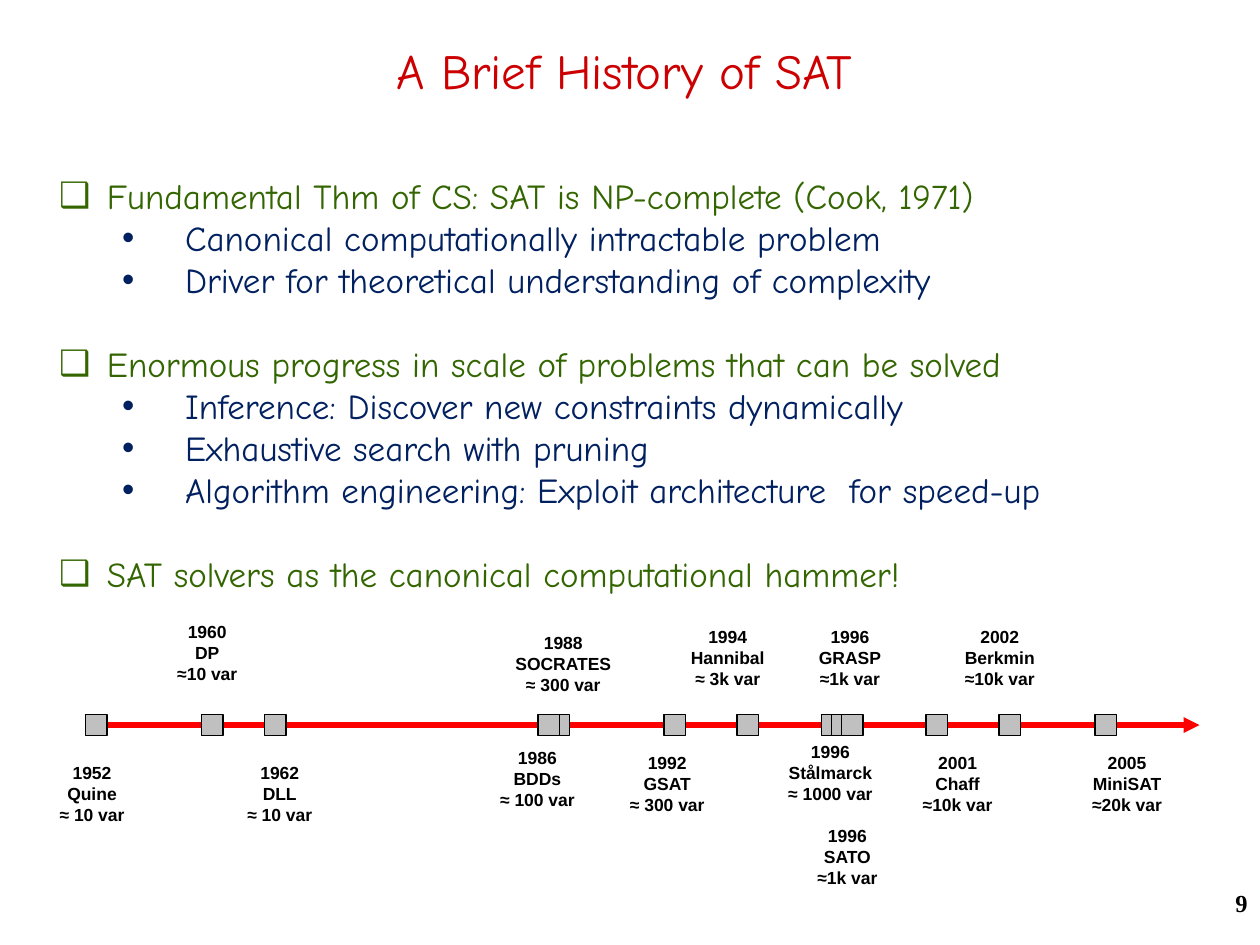
from lxml.etree import SubElement
from pptx import Presentation
from pptx.dml.color import RGBColor
from pptx.enum.shapes import MSO_CONNECTOR as Connector, MSO_SHAPE as Preset
from pptx.enum.text import MSO_ANCHOR as Anchor, PP_ALIGN as Align
from pptx.oxml.ns import qn
from pptx.util import Inches, Pt

COLORS = {
    "title": "CC0000",
    "topic": "336600",
    "detail": "002060",
    "text": "000000",
    "axis": "FF0000",
    "marker": "C0C0C0",
}
AXIS_Y = 5.75
MARKER_TOP, MARKER_SIZE = 5.67, 0.17
MARKERS = [0.68, 1.6, 2.1, 4.35, 5.85, 6.52, 4.27, 5.27, 6.6, 7.35, 7.93, 6.68, 8.69]

TOPICS = [
    ("Fundamental Thm of CS: SAT is NP-complete (Cook, 1971)", [
        "Canonical computationally intractable problem",
        "Driver for theoretical understanding of complexity",
    ]),
    ("Enormous progress in scale of problems that can be solved", [
        "Inference: Discover new constraints dynamically",
        "Exhaustive search with pruning",
        "Algorithm engineering: Exploit architecture  for speed-up",
    ]),
    ("SAT solvers as the canonical computational hammer!", []),
]

SOLVERS = [
    (0.32, 6.0, 0.82, "1952\nQuine\n≈ 10 var"),
    (1.26, 4.88, 0.77, "1960\nDP\n≈10 var"),
    (1.81, 6.0, 0.82, "1962\nDLL\n≈ 10 var"),
    (3.81, 5.88, 0.91, "1986\nBDDs\n≈ 100 var"),
    (3.68, 4.97, 1.58, "1988\nSOCRATES\n≈ 300 var"),
    (4.84, 5.92, 0.91, "1992\nGSAT\n≈ 300 var"),
    (5.32, 4.92, 0.91, "1994\nHannibal\n≈ 3k var"),
    (6.09, 5.83, 1.0, "1996\nStålmarck\n≈ 1000 var"),
    (6.35, 4.92, 0.79, "1996\nGRASP\n≈1k var"),
    (6.34, 6.5, 0.77, "1996\nSATO\n≈1k var"),
    (7.17, 5.92, 0.86, "2001\nChaff\n≈10k var"),
    (7.5, 4.92, 0.87, "2002\nBerkmin\n≈10k var"),
    (8.51, 5.92, 0.87, "2005\nMiniSAT\n≈20k var"),
]


def rgb(name):
    return RGBColor.from_string(COLORS[name])


class HistoryPage:
    heading_font = "Comic Neue"
    label_font = "Arial"
    number_font = "Times New Roman"

    def __init__(self, deck):
        self.page = deck.slides.add_slide(deck.slide_layouts[6])

    def style(self, para, font, size, color, bold=False):
        for span in para.runs:
            span.font.name = font
            span.font.size = Pt(size)
            span.font.bold = bold
            span.font.color.rgb = rgb(color)

    def text(self, area, content, font, size, color, align, bold=False,
             anchor=Anchor.TOP, wrap=True):
        box = self.page.shapes.add_textbox(*map(Inches, area))
        frame = box.text_frame
        frame.word_wrap = wrap
        frame.vertical_anchor = anchor
        frame.text = content
        for para in frame.paragraphs:
            para.alignment = align
            self.style(para, font, size, color, bold)
        return frame

    def title(self, content):
        self.text((0.77, -0.07, 8.5, 1.25), content, self.heading_font, 28,
                  "title", Align.CENTER, anchor=Anchor.MIDDLE)

    def label(self, left, top, width, content):
        self.text((left, top, width, 0.7), content, self.label_font, 10,
                  "text", Align.CENTER, bold=True, wrap=False)

    def number(self, content):
        self.text((7.92, 7, 2.08, 0.5), content, self.number_font, 14,
                  "text", Align.RIGHT, bold=True)

    def bullet(self, para, symbol, margin, hanging):
        props = para._p.get_or_add_pPr()
        props.set("marL", str(Inches(margin)))
        props.set("indent", str(-Inches(hanging)))
        SubElement(props, qn("a:buFont"), typeface=self.label_font)
        SubElement(props, qn("a:buChar"), char=symbol)

    def outline(self, topics):
        lines = [line for topic, details in topics for line in (topic, *details)]
        headings = {topic for topic, _ in topics}
        frame = self.text((0.37, -0.11, 9.58, 6.33), "\n".join(lines),
                          self.heading_font, 20, "detail", Align.LEFT,
                          anchor=Anchor.MIDDLE)
        for index, para in enumerate(frame.paragraphs):
            if para.text in headings:
                para.space_before = Pt(24 if index else 0)
                self.style(para, self.heading_font, 20, "topic")
                self.bullet(para, "❑", 0.38, 0.38)
            else:
                para.level = 1
                self.bullet(para, "•", 1.0, 0.5)

    def arrow(self, start, end, y):
        line = self.page.shapes.add_connector(
            Connector.STRAIGHT, Inches(start), Inches(y), Inches(end), Inches(y))
        line.line.color.rgb = rgb("axis")
        line.line.width = Pt(3)
        SubElement(line.line._get_or_add_ln(), qn("a:tailEnd"), type="triangle")
        SubElement(line._element.spPr, qn("a:effectLst"))
        return line

    def marker(self, left):
        square = self.page.shapes.add_shape(
            Preset.RECTANGLE, Inches(left), Inches(MARKER_TOP),
            Inches(MARKER_SIZE), Inches(MARKER_SIZE))
        square.shadow.inherit = False
        square.fill.solid()
        square.fill.fore_color.rgb = rgb("marker")
        square.line.color.rgb = rgb("text")
        square.line.width = Pt(0.75)
        return square


def main():
    deck = Presentation()
    deck.slide_width, deck.slide_height = Inches(10), Inches(7.5)
    history = HistoryPage(deck)
    history.title("A Brief History of SAT ")
    axis = history.arrow(MARKERS[0], 9.52, AXIS_Y)
    squares = [history.marker(left) for left in MARKERS]
    axis.begin_connect(squares[0], 1)
    axis.end_y = axis.begin_y
    for solver in SOLVERS:
        history.label(*solver)
    history.outline(TOPICS)
    history.number("9")
    deck.save("out.pptx")


if __name__ == "__main__":
    main()
